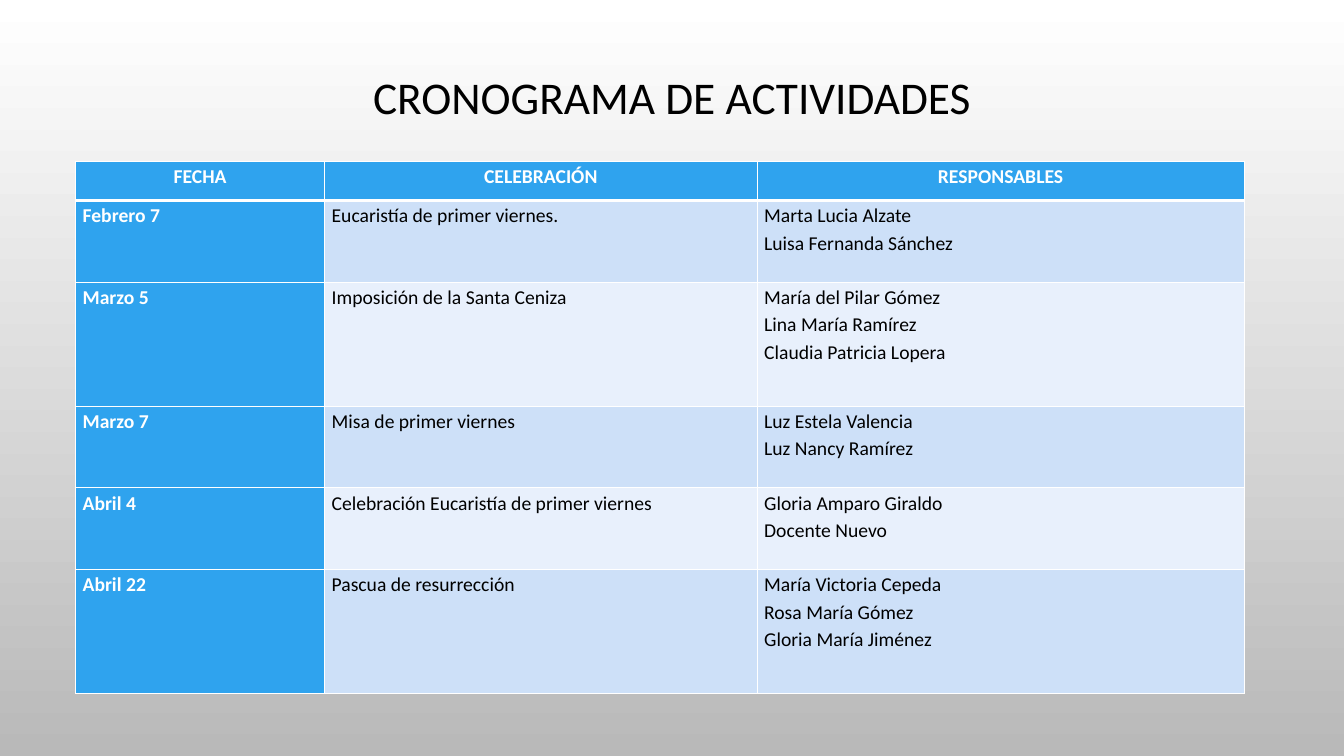
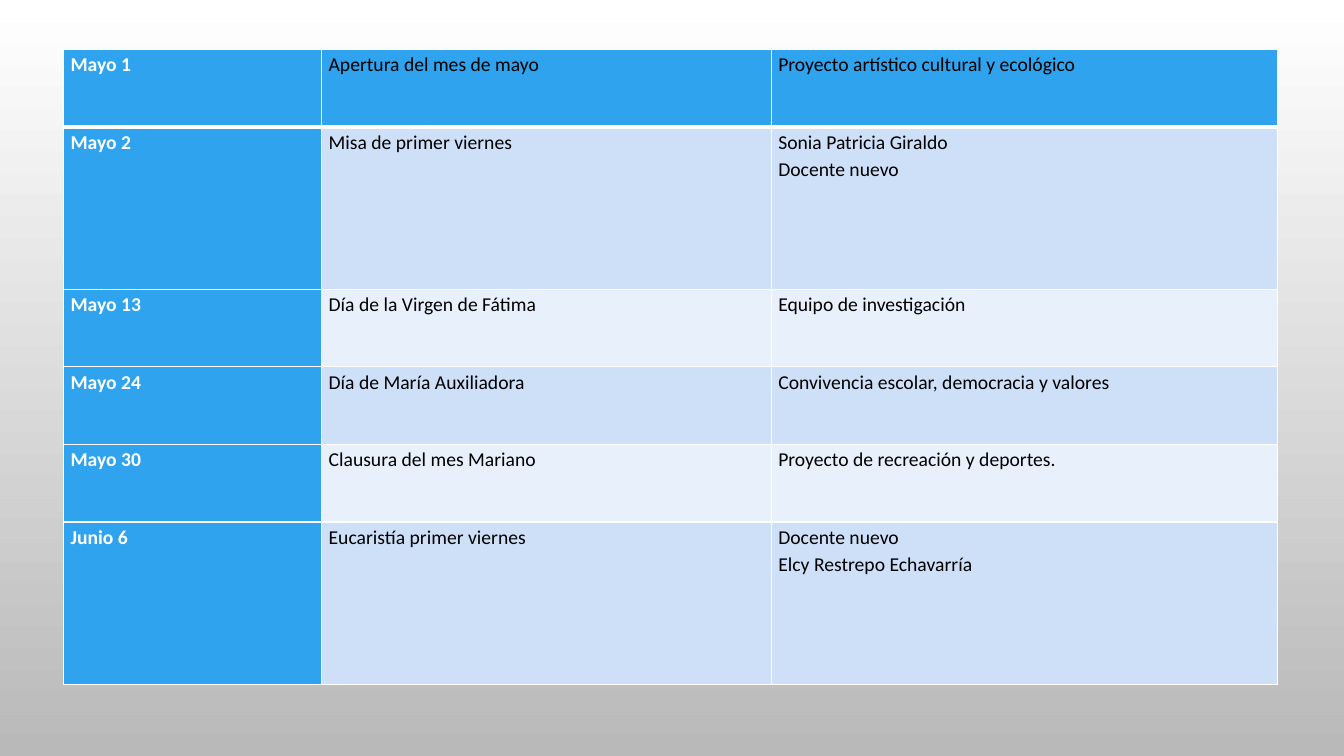
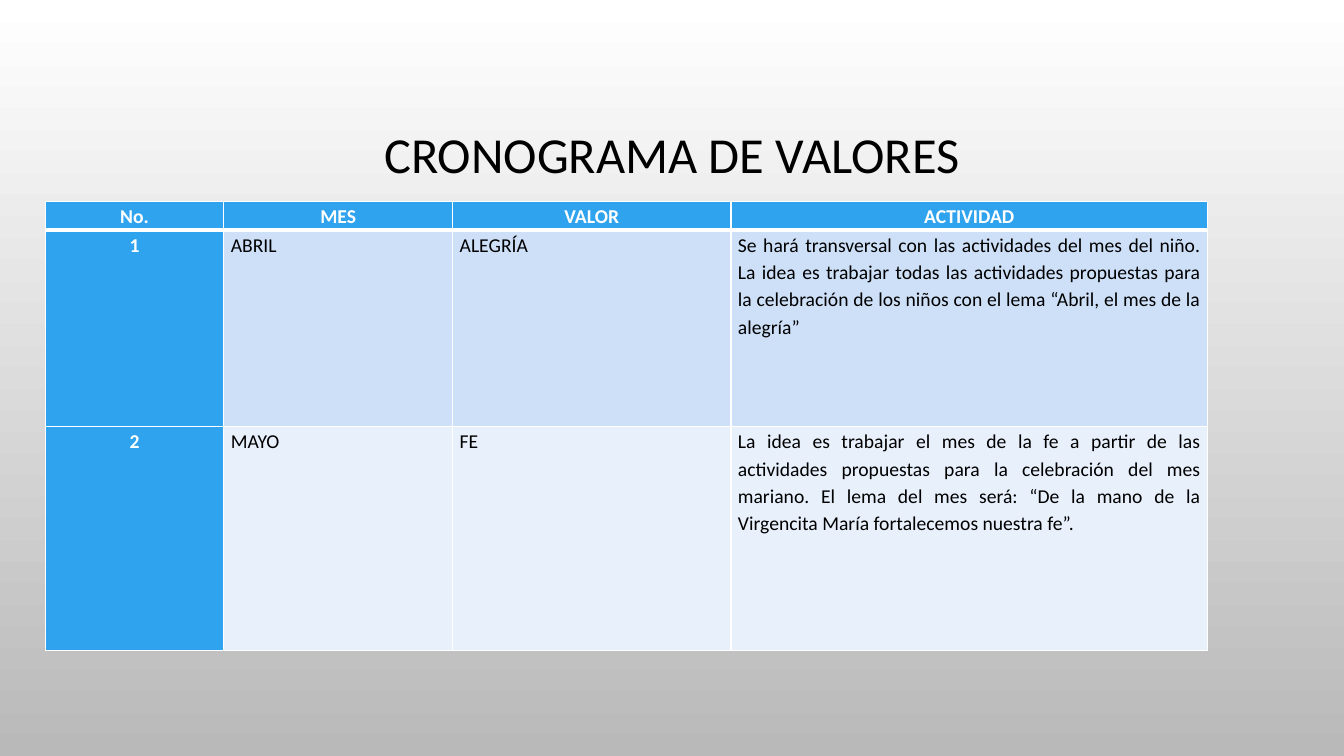
"""Build the schedule slides for activities and values."""
from lxml import etree
from pptx import Presentation
from pptx.dml.color import RGBColor
from pptx.enum.text import MSO_ANCHOR, MSO_AUTO_SIZE, PP_ALIGN
from pptx.oxml.ns import qn
from pptx.util import Inches, Pt

CENTER, JUSTIFY = PP_ALIGN.CENTER, PP_ALIGN.JUSTIFY
MIDDLE, NO_AUTOFIT = MSO_ANCHOR.MIDDLE, MSO_AUTO_SIZE.NONE
TITLE_ONLY, BLANK = 5, 6
FONT = "Calibri"
COLORS = {
    "white": "FFFFFF",
    "black": "000000",
    "gray": "B9B9B9",
    "accent": "2FA3EE",
    "band_dark": "CDE0F8",
    "band_light": "E8F0FC",
}
THIN, THICK = 1, 3

ACTIVITIES = [
    ("FECHA", "CELEBRACIÓN", "RESPONSABLES"),
    ("Febrero 7", "Eucaristía de primer viernes.",
     "Marta Lucia Alzate\nLuisa Fernanda Sánchez"),
    ("Marzo 5", "Imposición de la Santa Ceniza",
     "María del Pilar Gómez\nLina María Ramírez\nClaudia Patricia Lopera"),
    ("Marzo 7", "Misa de primer viernes",
     "Luz Estela Valencia\nLuz Nancy Ramírez"),
    ("Abril 4", "Celebración Eucaristía de primer viernes",
     "Gloria Amparo Giraldo\nDocente Nuevo"),
    ("Abril 22", "Pascua de resurrección",
     "María Victoria Cepeda\nRosa María Gómez\nGloria María Jiménez"),
]
MAY_ACTIVITIES = [
    ("Mayo 1", "Apertura del mes de mayo",
     "Proyecto artístico cultural y ecológico"),
    ("Mayo 2", "Misa de primer viernes",
     "Sonia Patricia Giraldo\nDocente nuevo"),
    ("Mayo 13", "Día de la Virgen de Fátima", "Equipo de investigación"),
    ("Mayo 24", "Día de María Auxiliadora",
     "Convivencia escolar, democracia y valores"),
    ("Mayo 30", "Clausura del mes Mariano",
     "Proyecto de recreación y deportes."),
    ("Junio 6", "Eucaristía primer viernes",
     "Docente nuevo\nElcy Restrepo Echavarría"),
]
VALUES = [
    ("No.", "MES", "VALOR", "ACTIVIDAD"),
    ("1", "ABRIL", "ALEGRÍA",
     "Se hará transversal con las actividades del mes del niño. La idea es "
     "trabajar todas las actividades propuestas para la celebración de los "
     "niños con el lema “Abril, el mes de la alegría”"),
    ("2", "MAYO", "FE",
     "La idea es trabajar el mes de la fe a partir de las actividades "
     "propuestas para la celebración del mes mariano. El lema del mes será: "
     "“De la mano de la Virgencita María fortalecemos nuestra fe”."),
]


def rgb(name):
    """Return the named colour."""
    return RGBColor.from_string(COLORS[name])


def set_background(master):
    """Give the master its vertical white to gray gradient."""
    fill = master.background.fill
    fill.gradient()
    fill.gradient_angle = 270
    for stop, position, color in zip(fill.gradient_stops, (0, 1), ("white", "gray")):
        stop.position = position
        stop.color.rgb = rgb(color)


def add_line(paragraph, text, size, color, align, spacing, bold=False):
    """Write one formatted run into a paragraph."""
    paragraph.alignment = align
    paragraph.line_spacing = spacing
    run = paragraph.add_run()
    run.text = text
    run.font.name = FONT
    run.font.size = Pt(size)
    run.font.bold = bold
    run.font.color.rgb = rgb(color)


def set_title(slide, text, height, size):
    """Place and format the slide title."""
    title = slide.shapes.title
    title.left, title.top = Inches(1), Inches(0.68)
    title.width, title.height = Inches(11.33), Inches(height)
    frame = title.text_frame
    frame.auto_size = NO_AUTOFIT
    frame.word_wrap = True
    frame.vertical_anchor = MIDDLE
    add_line(frame.paragraphs[0], text, size, "black", CENTER, 0.9)


def set_borders(cell, top, bottom):
    """Draw white borders around a cell with the given top and bottom widths."""
    properties = cell._tc.get_or_add_tcPr()
    for side, width in (("L", THIN), ("R", THIN), ("T", top), ("B", bottom)):
        line = etree.SubElement(properties, qn(f"a:ln{side}"), w=str(Pt(width)))
        solid = etree.SubElement(line, qn("a:solidFill"))
        etree.SubElement(solid, qn("a:srgbClr"), val=COLORS["white"])


def fill_cell(cell, text, fill, color, align):
    """Write and colour one table cell."""
    cell.margin_left = cell.margin_right = Inches(0.07)
    cell.margin_top = cell.margin_bottom = 0
    cell.fill.solid()
    cell.fill.fore_color.rgb = rgb(fill)
    frame = cell.text_frame
    for index, line in enumerate(text.split("\n")):
        paragraph = frame.add_paragraph() if index else frame.paragraphs[0]
        add_line(paragraph, line, 14, color, align, 1.15, color == "white")


def add_schedule(slide, rows, left, top, widths, heights,
                 has_header=True, center_first=False):
    """Add a schedule table with an accent first row and first column."""
    table = slide.shapes.add_table(
        len(rows), len(widths), Inches(left), Inches(top),
        Inches(sum(widths)), Inches(sum(heights))).table
    for column, width in zip(table.columns, widths):
        column.width = Inches(width)
    for r, (texts, height) in enumerate(zip(rows, heights)):
        table.rows[r].height = Inches(height)
        band = "band_dark" if r % 2 else "band_light"
        is_header = has_header and r == 0
        for c, text in enumerate(texts):
            cell = table.cell(r, c)
            set_borders(cell, THICK if r == 1 else THIN, THICK if r == 0 else THIN)
            fill_cell(
                cell, text,
                "accent" if r == 0 or c == 0 else band,
                "white" if is_header or c == 0 else "black",
                CENTER if is_header or (center_first and c == 0) else JUSTIFY)


def main():
    """Build and save the presentation."""
    prs = Presentation()
    prs.slide_width, prs.slide_height = Inches(13.33), Inches(7.5)
    set_background(prs.slide_master)
    layouts = prs.slide_layouts

    activities = prs.slides.add_slide(layouts[TITLE_ONLY])
    set_title(activities, "CRONOGRAMA DE ACTIVIDADES", 0.62, 32.4)
    add_schedule(activities, ACTIVITIES, 0.75, 1.6, (2.47, 4.29, 4.83),
                 (0.39, 0.81, 1.23, 0.81, 0.81, 1.23))

    may_activities = prs.slides.add_slide(layouts[BLANK])
    add_schedule(may_activities, MAY_ACTIVITIES, 0.63, 0.49, (2.56, 4.46, 5.02),
                 (0.77, 1.61, 0.77, 0.77, 0.77, 1.61), has_header=False)

    values = prs.slides.add_slide(layouts[TITLE_ONLY])
    set_title(values, "CRONOGRAMA DE VALORES", 1.75, 36)
    add_schedule(values, VALUES, 0.45, 2, (1.77, 2.27, 2.76, 4.73),
                 (0.28, 1.95, 2.22), center_first=True)

    prs.save("out.pptx")


if __name__ == "__main__":
    main()
